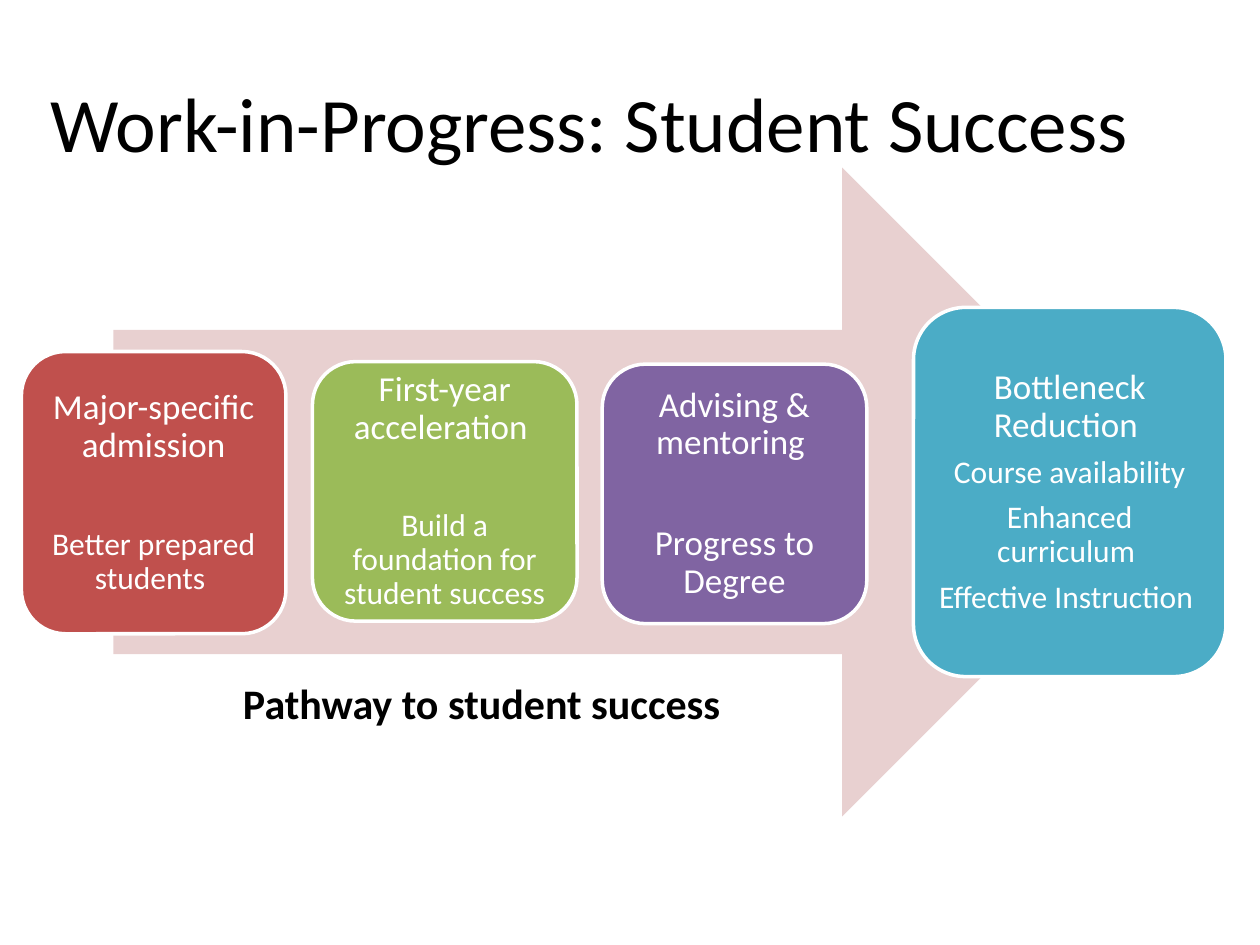
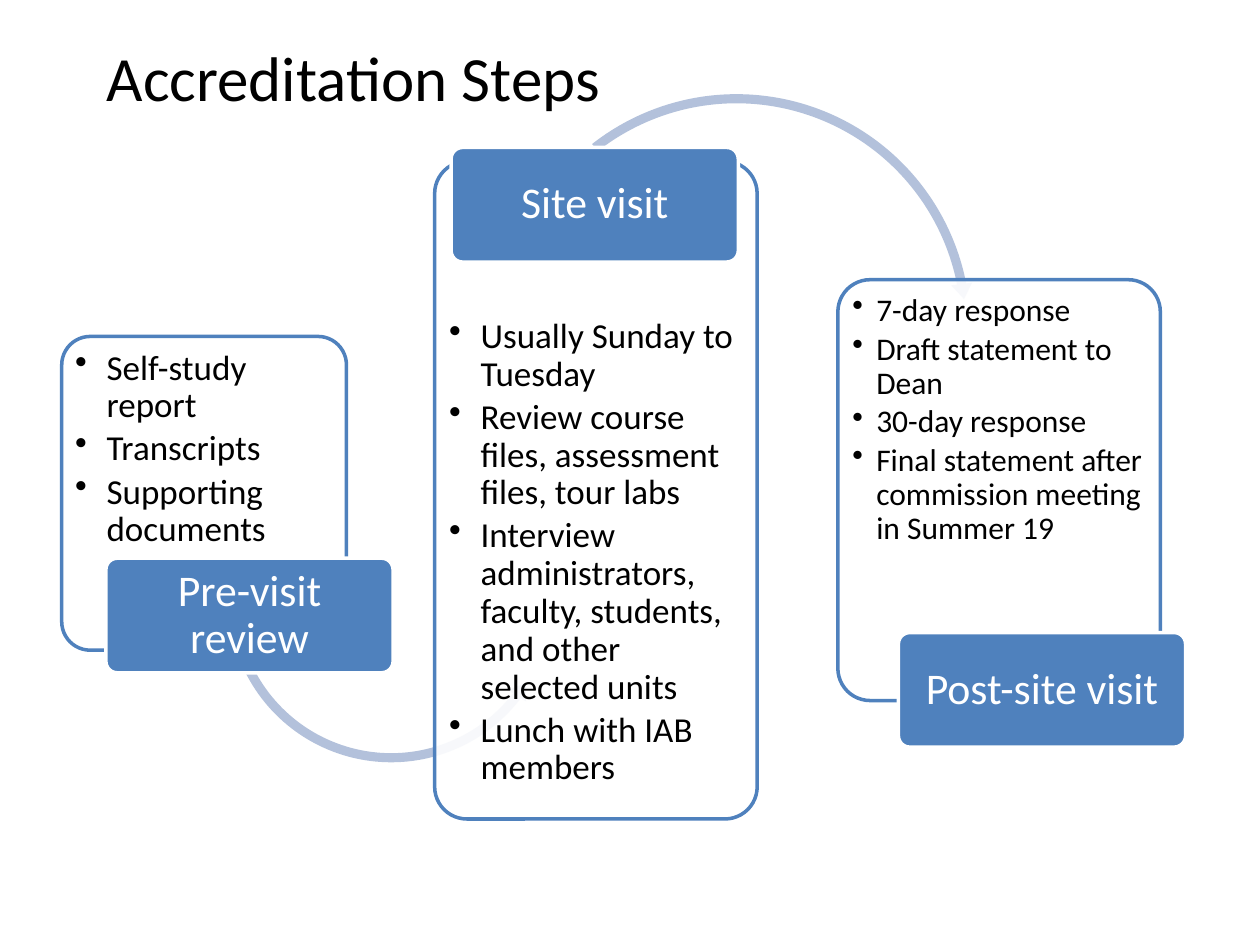
from dataclasses import dataclass

from lxml import etree
from pptx import Presentation
from pptx import util as u
from pptx.dml.color import RGBColor
from pptx.enum import shapes, text
from pptx.oxml.ns import qn

PX = u.Inches(1) // 100  # one px is a hundredth of an inch


@dataclass(frozen=True)
class Theme:
    font: str = "Calibri"
    black: str = "000000"
    white: str = "FFFFFF"
    red: str = "C0504D"
    green: str = "9BBB59"
    purple: str = "8064A2"
    teal: str = "4BACC6"
    blue: str = "4F81BD"
    pale_red: str = "E8D0D0"
    pale_blue: str = "B3C1DB"
    title: int = 44
    small_title: int = 36
    label: int = 25
    caption: int = 24
    body: int = 20
    detail: int = 18
    outline: int = 2
    tight: float = 0.9


THEME = Theme()
SHAPE = shapes.MSO_SHAPE
CENTER, LEFT = text.PP_ALIGN.CENTER, text.PP_ALIGN.LEFT
TOP, MIDDLE = text.MSO_ANCHOR.TOP, text.MSO_ANCHOR.MIDDLE


class Deck:
    def __init__(self, theme):
        self.theme = theme
        self.presentation = Presentation()
        self.presentation.slide_width = 1000 * PX
        self.presentation.slide_height = 750 * PX
        self.slide = None

    def new_slide(self):
        layout = self.presentation.slide_layouts[6]
        self.slide = self.presentation.slides.add_slide(layout)

    def shape(self, kind, box, fill, line=None, adjustments=(), opacity=None):
        shape = self.slide.shapes.add_shape(kind, *(PX * side for side in box))
        shape.shadow.inherit = False
        shape.fill.solid()
        shape.fill.fore_color.rgb = RGBColor.from_string(fill)
        if opacity is not None:
            color = shape.fill._xPr.find(qn("a:solidFill"))[0]
            etree.SubElement(color, qn("a:alpha"), val=str(opacity * 1000))
        if line:
            shape.line.color.rgb = RGBColor.from_string(line)
            shape.line.width = u.Pt(self.theme.outline)
        else:
            shape.line.fill.background()
        for index, value in enumerate(adjustments):
            shape.adjustments[index] = value
        return shape

    def frame(self, shape, margins, anchor):
        """Set the wrapping, margins (left, top, right, bottom) and anchor."""
        frame = shape.text_frame
        frame.word_wrap = True
        frame.vertical_anchor = anchor
        (frame.margin_left, frame.margin_top,
         frame.margin_right, frame.margin_bottom) = (PX * side for side in margins)
        return frame

    def paragraph(self, frame, words, size, color, align=LEFT, before=0,
                  spacing=1.0, bold=False, indent=0):
        first = not frame.paragraphs[0].runs
        paragraph = frame.paragraphs[0] if first else frame.add_paragraph()
        if indent:
            properties = paragraph._p.get_or_add_pPr()
            properties.set("marL", str(indent * PX))
            properties.set("indent", str(-indent * PX))
            etree.SubElement(properties, qn("a:buChar"), char="•")
        paragraph.alignment = align
        paragraph.line_spacing = spacing
        if not first:
            paragraph.space_before = u.Pt(before)
        run = paragraph.add_run()
        run.text = words
        run.font.name = self.theme.font
        run.font.size = u.Pt(size)
        run.font.bold = bold
        run.font.color.rgb = RGBColor.from_string(color)

    def textbox(self, box, words, size, align=LEFT, anchor=TOP, bold=False):
        shape = self.slide.shapes.add_textbox(*(PX * side for side in box))
        frame = self.frame(shape, (10, 5, 10, 5), anchor)
        self.paragraph(frame, words, size, self.theme.black, align, bold=bold)

    def title(self, box, words, size, align=LEFT):
        self.textbox(box, words, size, align, MIDDLE)

    def card(self, box, fill, heading, details, size, gap):
        """Filled stage of the pathway: a heading with centred lines below."""
        theme = self.theme
        shape = self.shape(SHAPE.ROUNDED_RECTANGLE, box, fill, theme.white)
        frame = self.frame(shape, (8, 8, 8, 8), MIDDLE)
        self.paragraph(frame, heading, theme.body, theme.white, CENTER,
                       spacing=theme.tight)
        for words in details:
            self.paragraph(frame, words, size, theme.white, CENTER, gap, theme.tight)

    def panel(self, box, items, size, indent, top=4):
        """Outlined step with a bulleted list that starts at the given margin."""
        theme = self.theme
        shape = self.shape(SHAPE.ROUNDED_RECTANGLE, box, theme.white, theme.blue,
                           [0.1], opacity=90)
        frame = self.frame(shape, (4, top, 4, 4), TOP)
        for words in items:
            self.paragraph(frame, words, size, theme.black, before=0.15 * size,
                           spacing=theme.tight, indent=indent)

    def label(self, left, top, words):
        theme = self.theme
        shape = self.shape(SHAPE.ROUNDED_RECTANGLE, (left, top, 228, 91),
                           theme.blue, theme.white, [0.1])
        frame = self.frame(shape, (5, 3, 5, 3), MIDDLE)
        self.paragraph(frame, words, theme.label, theme.white, CENTER,
                       spacing=theme.tight)

    def curved_arrow(self, kind, left, top, size, adjustments):
        self.shape(kind, (left, top, size, size), self.theme.pale_blue,
                   adjustments=adjustments)


def build_student_success(deck):
    theme = deck.theme
    deck.new_slide()
    deck.shape(SHAPE.RIGHT_ARROW, (90, 133, 836, 515), theme.pale_red)
    cards = [
        ((17, 279, 210, 224), theme.red, "Major-specific admission",
         ["Better prepared students "], theme.detail, 36),
        ((248, 287, 210, 206), theme.green, "First-year acceleration ",
         ["Build a foundation for student success"], theme.detail, 36),
        ((478, 289, 210, 206), theme.purple, "Advising & mentoring ",
         ["Progress to Degree"], theme.body, 36),
        ((725, 244, 248, 293), theme.teal, "Bottleneck Reduction ",
         ["Course availability", "Enhanced curriculum ", "Effective Instruction "],
         theme.detail, 6.5),
    ]
    for card in cards:
        deck.card(*card)
    deck.title((25, 43, 900, 107), "Work-in-Progress: Student Success ",
               theme.title, CENTER)
    deck.textbox((183, 533, 442, 50), "Pathway to student success",
                 theme.caption, bold=True)


def build_accreditation_steps(deck):
    theme = deck.theme
    deck.new_slide()
    deck.title((75, 17, 700, 87), "Accreditation Steps", theme.small_title)

    deck.panel((49, 267, 226, 249),
               ["Self-study report", "Transcripts", "Supporting documents"],
               theme.body, 25)
    deck.curved_arrow(SHAPE.LEFT_CIRCULAR_ARROW, 176, 341, 269,
                      [0.027, 3.327, 22.525, 91.688, 0.032])
    deck.label(84, 443, "Pre-visit review")

    deck.panel((345, 128, 256, 522),
               ["Usually Sunday to Tuesday",
                "Review course files, assessment files, tour labs",
                "Interview administrators, faculty, students, "
                "and other selected units",
                "Lunch with IAB members"],
               theme.body, 25, top=117)
    deck.curved_arrow(SHAPE.CIRCULAR_ARROW, 394, 70, 381,
                      [0.019, 2.302, 209.333, 139.145, 0.022])
    deck.label(358, 117, "Site visit")

    deck.panel((665, 222, 256, 334),
               ["7-day response", "Draft statement to Dean", "30-day response",
                "Final statement after commission meeting in Summer 19"],
               theme.detail, 19)
    deck.label(713, 502, "Post-site visit")


def main():
    deck = Deck(THEME)
    build_student_success(deck)
    build_accreditation_steps(deck)
    deck.presentation.save("out.pptx")


if __name__ == "__main__":
    main()
